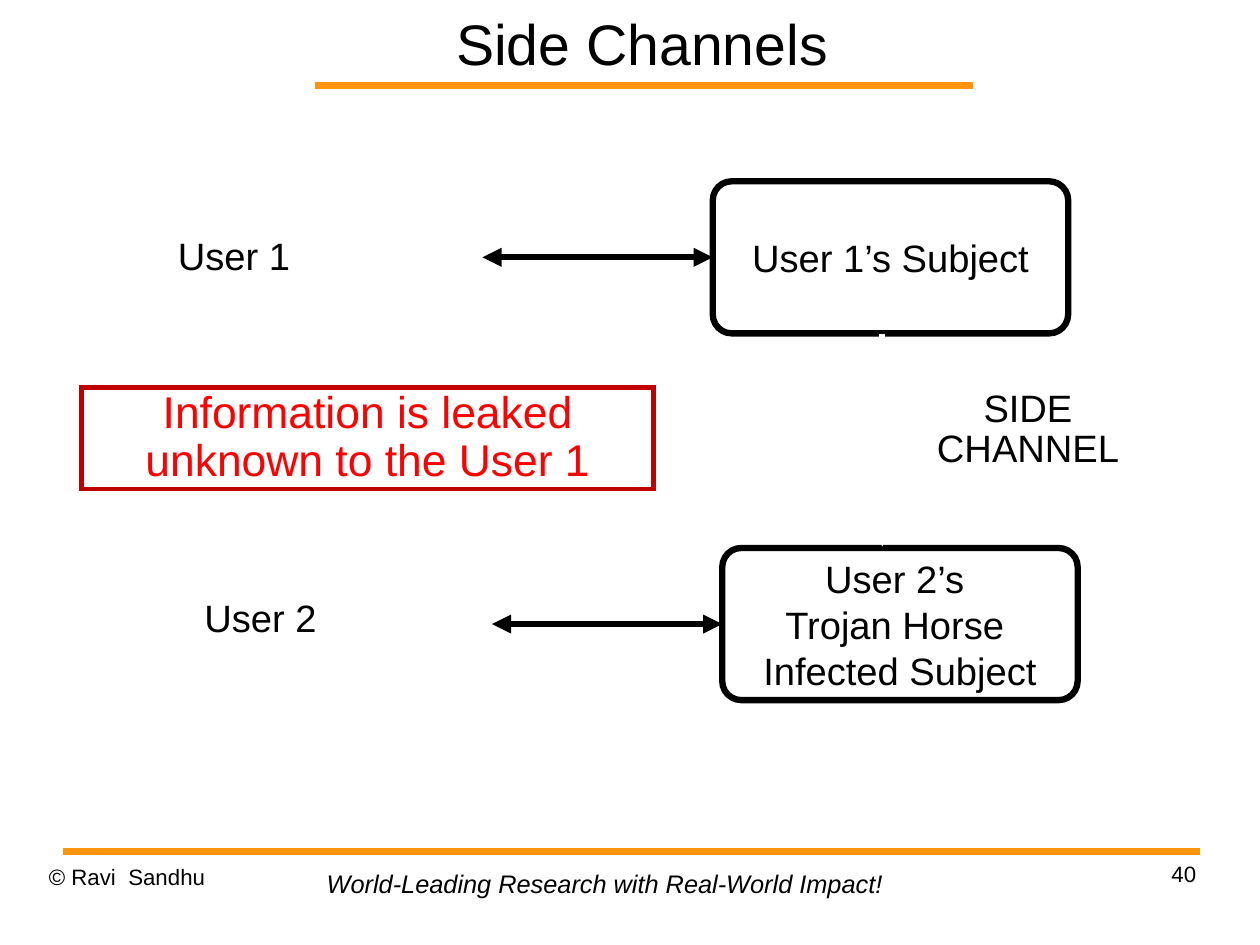
from lxml import etree
from pptx import Presentation
from pptx.dml.color import RGBColor
from pptx.enum.shapes import MSO_CONNECTOR, MSO_SHAPE
from pptx.enum.text import MSO_ANCHOR, MSO_AUTO_SIZE, PP_ALIGN
from pptx.oxml.ns import qn
from pptx.util import Pt

STRAIGHT = MSO_CONNECTOR.STRAIGHT
RECTANGLE, ROUNDED = MSO_SHAPE.RECTANGLE, MSO_SHAPE.ROUNDED_RECTANGLE
TOP, MIDDLE = MSO_ANCHOR.TOP, MSO_ANCHOR.MIDDLE
LEFT, CENTER, RIGHT = PP_ALIGN.LEFT, PP_ALIGN.CENTER, PP_ALIGN.RIGHT
NO_GROW, GROW = MSO_AUTO_SIZE.NONE, MSO_AUTO_SIZE.SHAPE_TO_FIT_TEXT

BLACK, WHITE, ORANGE = "000000", "FFFFFF", "FF950E"
RED, DARK_RED = "FF0000", "C00000"
FONT = "Arial"
LABEL_INSETS = (5, 2.2)
SUBJECT_WIDTH, SUBJECT_HEIGHT = 223.9, 95.8
ARROW_LENGTH = 145


def color(hex_value):
    return RGBColor.from_string(hex_value)


def write(shape, text, size, ink=BLACK, align=LEFT, anchor=TOP, insets=(0, 0),
          spacing=1.0, wrap=True, autosize=NO_GROW, italic=False):
    """Put text into a shape; insets are (left and right, top and bottom)."""
    frame = shape.text_frame
    frame.text = text
    frame.word_wrap = wrap
    frame.auto_size = autosize
    frame.vertical_anchor = anchor
    frame.margin_left = frame.margin_right = Pt(insets[0])
    frame.margin_top = frame.margin_bottom = Pt(insets[1])
    for para in frame.paragraphs:
        para.alignment = align
        para.line_spacing = spacing
        for span in para.runs:
            span.font.name = FONT
            span.font.size = Pt(size)
            span.font.italic = italic
            span.font.color.rgb = color(ink)


def add_text(page, left, top, width, height, text, size, **style):
    box = page.shapes.add_textbox(Pt(left), Pt(top), Pt(width), Pt(height))
    write(box, text, size, **style)


def add_label(page, left, top, width, height, text, align=LEFT):
    add_text(page, left, top, width, height, text, 24, align=align,
             insets=LABEL_INSETS, spacing=0.87, wrap=False, autosize=GROW)


def add_box(page, kind, left, top, width, height, outline, weight):
    box = page.shapes.add_shape(kind, Pt(left), Pt(top), Pt(width), Pt(height))
    box.shadow.inherit = False
    box.line.color.rgb = color(outline)
    box.line.width = Pt(weight)
    etree.SubElement(box.line._get_or_add_ln(), qn("a:miter"), lim="800000")
    return box


def add_line(page, start, end, ink, weight, heads=()):
    """Draw a line; heads names its arrowheads, headEnd at start and tailEnd at end."""
    line = page.shapes.add_connector(STRAIGHT, *map(Pt, start + end))
    line.line.color.rgb = color(ink)
    line.line.width = Pt(weight)
    for head in heads:
        etree.SubElement(line.line._get_or_add_ln(), qn("a:" + head), type="triangle")
    etree.SubElement(line._element.spPr, qn("a:effectLst"))
    return line


def add_subject(page, left, top, text):
    """Add a rounded subject box with the double arrow from its user."""
    box = add_box(page, ROUNDED, left, top, SUBJECT_WIDTH, SUBJECT_HEIGHT, BLACK, 4)
    box.adjustments[0] = 0.125
    box.fill.background()
    write(box, text, 24, align=CENTER, anchor=MIDDLE, insets=(7.2, 3.6), wrap=False)
    middle = top + SUBJECT_HEIGHT / 2
    arrow = add_line(page, (left - ARROW_LENGTH, middle), (left, middle),
                     BLACK, 4, ("headEnd", "tailEnd"))
    arrow.end_connect(box, 1)


def add_title(page, text):
    title = page.shapes.title
    title.left, title.top, title.width, title.height = map(Pt, (173, 0, 463, 54))
    write(title, text, 36, align=CENTER, anchor=MIDDLE)


def add_footer(page):
    add_text(page, 30.8, 543.6, 185, 41, "© Ravi  Sandhu", 14)
    add_text(page, 568.6, 542.2, 185, 41, "40", 14, align=RIGHT)
    add_text(page, 198.7, 543.6, 365.8, 26.6,
             "World-Leading Research with Real-World Impact!", 16,
             insets=(7.2, 3.6), wrap=False, autosize=GROW, italic=True)


def main():
    deck = Presentation()
    deck.slide_width, deck.slide_height = Pt(793.75), Pt(595.25)
    page = deck.slides.add_slide(deck.slide_layouts[5])

    add_line(page, (198.7, 54), (612.7, 54), ORANGE, 4.31)
    add_line(page, (39.4, 536.2), (755.8, 536.2), ORANGE, 4.31)
    add_footer(page)
    add_title(page, "Side Channels")

    add_label(page, 107.1, 148.3, 81.4, 29.5, "User 1")
    add_subject(page, 449, 114.2, "User 1’s Subject")
    add_label(page, 123.8, 376.2, 81.4, 29.5, "User 2")
    add_subject(page, 455, 345.2, "User 2’s \nTrojan Horse \nInfected Subject")

    add_line(page, (555.8, 210.2), (555.8, 344.2), WHITE, 4, ("tailEnd",))
    add_label(page, 584.6, 243.8, 126, 54.7, "SIDE\nCHANNEL", CENTER)

    warning = add_box(page, RECTANGLE, 51.5, 244, 360, 64.1, DARK_RED, 3)
    warning.fill.solid()
    warning.fill.fore_color.rgb = color(WHITE)
    write(warning, "Information is leaked unknown to the User 1", 28, RED,
          align=CENTER, insets=LABEL_INSETS, spacing=0.89)

    deck.save("out.pptx")


if __name__ == "__main__":
    main()
